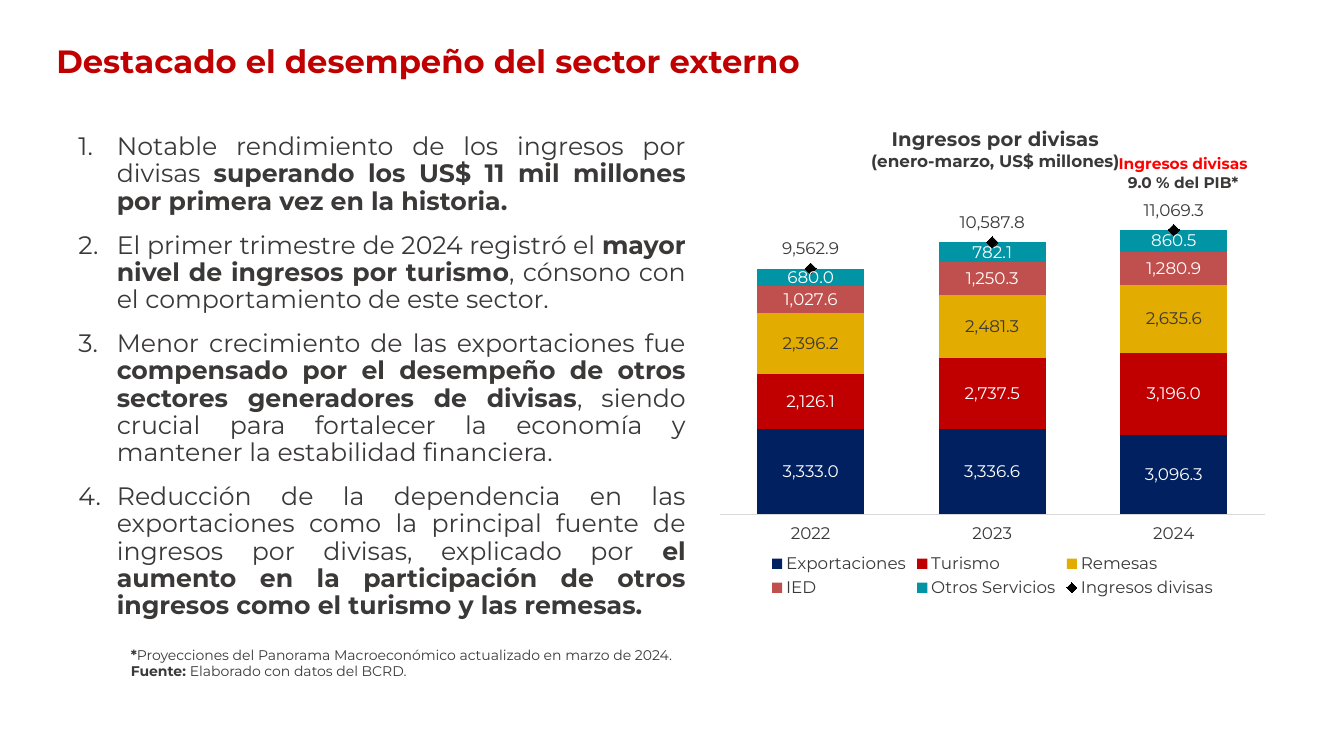
from dataclasses import dataclass
from typing import Optional

from lxml.etree import SubElement as Sub
from pptx import Presentation
from pptx.chart.chart import Chart
from pptx.chart.data import CategoryChartData as Data
from pptx.dml.color import RGBColor as RGB
from pptx.enum.chart import XL_CHART_TYPE as Kind
from pptx.enum.chart import XL_LABEL_POSITION as Spot
from pptx.enum.chart import XL_LEGEND_POSITION as Side
from pptx.enum.chart import XL_MARKER_STYLE as Mark
from pptx.enum.chart import XL_TICK_LABEL_POSITION as Tick
from pptx.enum.chart import XL_TICK_MARK as Notch
from pptx.enum.text import PP_ALIGN as Align
from pptx.oxml.ns import qn
from pptx.util import Inches, Pt


@dataclass(frozen=True)
class Theme:
    face: str = "Montserrat"
    ink: str = "3B3838"
    red: str = "C00000"
    alert: str = "FF0000"
    white: str = "FFFFFF"
    black: str = "000000"
    rule: str = "D9D9D9"
    navy: str = "002060"
    gold: str = "E2AC00"
    brick: str = "C0504D"
    teal: str = "0094A5"
    head: int = 23
    body: int = 18
    title: int = 14
    label: int = 12
    tag: int = 11
    note: int = 10


@dataclass(frozen=True)
class Bit:
    text: str
    bold: bool = False
    hue: Optional[str] = None


@dataclass(frozen=True)
class Box:
    left: float
    top: float
    wide: float
    high: float
    size: int
    paras: list[list[Bit]]
    align: Align = Align.LEFT
    line: Optional[float] = None
    after: int = 0
    count: bool = False


@dataclass(frozen=True)
class Group:
    name: str
    vals: tuple[float, ...]
    fill: str
    ink: str


T = Theme()
FMT = "#,##0.0"
YEARS = ("2022", "2023", "2024")

GROUPS = [
    Group("Exportaciones", (3333, 3336.6, 3096.3), T.navy, T.white),
    Group("Turismo", (2126.1, 2737.5, 3196), T.red, T.white),
    Group("Remesas", (2396.2, 2481.3, 2635.6), T.gold, T.ink),
    Group("IED", (1027.6, 1250.3, 1280.9), T.brick, T.white),
    Group("Otros Servicios", (680, 782.1, 860.5), T.teal, T.white),
    Group("Ingresos divisas", (9562.9, 10587.8, 11069.3), T.black, T.ink),
]

POINTS = [
    [Bit("Notable rendimiento de los ingresos por divisas "),
     Bit("superando los US$ 11 mil millones por primera vez en la historia.", True)],
    [Bit("El primer trimestre de 2024 registró el "),
     Bit("mayor nivel de ingresos por turismo", True),
     Bit(", cónsono con el comportamiento de este sector.")],
    [Bit("Menor crecimiento de las exportaciones fue "),
     Bit("compensado por el desempeño de otros sectores generadores de divisas", True),
     Bit(", siendo crucial para fortalecer la economía y mantener la estabilidad "
         "financiera.")],
    [Bit("Reducción de la dependencia en las exportaciones como la principal fuente "
         "de ingresos por divisas, explicado por "),
     Bit("el aumento en la participación de otros ingresos como el turismo y las "
         "remesas.", True)],
]

NOTES = [
    [Bit("*", True),
     Bit("Proyecciones del Panorama Macroeconómico actualizado en marzo de 2024.")],
    [Bit("Fuente: ", True), Bit("Elaborado con datos del BCRD.")],
]

HEAD = [[Bit("Destacado el desempeño del sector externo", True, T.red)]]
TAG = [[Bit("Ingresos divisas", True, T.alert)], [Bit("9.0 % del PIB*", True)]]

BOXES = [
    Box(0.46, 0.4, 8.09, 0.44, T.head, HEAD, line=0.9),
    Box(0.68, 1.28, 6.22, 4.68, T.body, POINTS, Align.JUSTIFY, 0.9, 12, True),
    Box(1.2, 6.36, 11.86, 0.44, T.note, NOTES),
    Box(10.96, 1.48, 1.55, 0.45, T.tag, TAG, Align.CENTER),
]


def style(font, size: int, hue: str = T.ink, bold: bool = False) -> None:
    font.name, font.size, font.bold = T.face, Pt(size), bold
    font.color.rgb = RGB.from_string(hue)


def write(slide, box: Box) -> None:
    area = map(Inches, (box.left, box.top, box.wide, box.high))
    frame = slide.shapes.add_textbox(*area).text_frame
    frame.word_wrap = True
    frame.text = "\n".join("" for _ in box.paras)
    for para, bits in zip(frame.paragraphs, box.paras):
        para.alignment = box.align
        para.line_spacing = box.line
        para.space_after = Pt(box.after)
        if box.count:
            props = para._p.get_or_add_pPr()
            props.set("marL", str(Inches(0.38)))
            props.set("indent", str(-Inches(0.38)))
            Sub(props, qn("a:buFont"), typeface="+mj-lt")
            Sub(props, qn("a:buAutoNum"), type="arabicPeriod")
        for bit in bits:
            run = para.add_run()
            run.text = bit.text
            style(run.font, box.size, bit.hue or T.ink, bit.bold)


def place(node, **spots: float) -> None:
    """Give a chart part a fixed layout, as shares of the chart."""
    for old in node.findall(qn("c:layout")):
        node.remove(old)
    lay = node.makeelement(qn("c:layout"), {})
    first = 1 if node.find(qn("c:tx")) is not None else 0
    node.insert(first, lay)
    man = Sub(lay, qn("c:manualLayout"))
    if "w" in spots:
        Sub(man, qn("c:layoutTarget"), val="inner")
    for key in "xy":
        Sub(man, qn(f"c:{key}Mode"), val="edge")
    for key, val in spots.items():
        Sub(man, qn(f"c:{key}"), val=str(val))


def split(chart: Chart) -> None:
    """Move the last bar series to a line plot on the same axes."""
    bars = chart.plots[0]._element
    total = bars.findall(qn("c:ser"))[-1]
    line = bars.makeelement(qn("c:lineChart"), {})
    bars.addnext(line)
    Sub(line, qn("c:grouping"), val="standard")
    Sub(line, qn("c:varyColors"), val="0")
    for flag in total.findall(qn("c:invertIfNegative")):
        total.remove(flag)
    line.append(total)
    Sub(line, qn("c:marker"), val="1")
    for axis in bars.findall(qn("c:axId")):
        Sub(line, qn("c:axId"), val=axis.get("val"))


def plot(slide) -> None:
    data = Data(number_format=FMT)
    data.categories = YEARS
    for group in GROUPS:
        data.add_series(group.name, group.vals)
    area = map(Inches, (7.04, 1.02, 5.61, 4.95))
    chart = slide.shapes.add_chart(Kind.COLUMN_STACKED, *area, data).chart
    style(chart.font, T.label)

    # Title and legend
    frame = chart.chart_title.text_frame
    frame.text = "Ingresos por divisas\n(enero-marzo, US$ millones)"
    for para, size in zip(frame.paragraphs, (T.title, T.label)):
        style(para.runs[0].font, size, bold=True)
    place(chart.chart_title._element, x=0.28, y=0.04)
    chart.has_legend = True
    chart.legend.position = Side.BOTTOM
    chart.legend.include_in_layout = False
    style(chart.legend.font, T.label)

    # Axes
    years, scale = chart.category_axis, chart.value_axis
    years.major_tick_mark = Notch.NONE
    years.tick_label_position = Tick.LOW
    years.format.line.color.rgb = RGB.from_string(T.rule)
    years.format.line.width = Pt(0.75)
    style(years.tick_labels.font, T.label)
    scale.minimum_scale, scale.maximum_scale = 0, 12000
    scale.has_major_gridlines = scale.visible = False

    # Stacked bars and total markers
    bars = chart.plots[0]
    bars.gap_width, bars.overlap, bars.vary_by_categories = 70, 100, False
    split(chart)
    place(bars._element.getparent(), x=0.018, y=0.207, w=0.963, h=0.618)
    rows = [row for part in chart.plots for row in part.series]
    for row, group in zip(rows, GROUPS):
        tags = row.data_labels
        tags.show_value = True
        tags.number_format, tags.number_format_is_linked = FMT, False
        style(tags.font, T.label, group.ink)
        look = row.format if row is not rows[-1] else row.marker.format
        look.fill.solid()
        look.fill.fore_color.rgb = RGB.from_string(group.fill)
    total = rows[-1]
    total.smooth = False
    total.format.line.fill.background()
    total.marker.style, total.marker.size = Mark.DIAMOND, 8
    total.marker.format.line.color.rgb = RGB.from_string(T.black)
    total.data_labels.position = Spot.ABOVE


def main() -> None:
    deck = Presentation()
    deck.slide_width, deck.slide_height = Inches(13.33), Inches(7.5)
    slide = deck.slides.add_slide(deck.slide_layouts[6])
    plot(slide)
    for box in BOXES:
        write(slide, box)
    deck.save("out.pptx")


if __name__ == "__main__":
    main()
